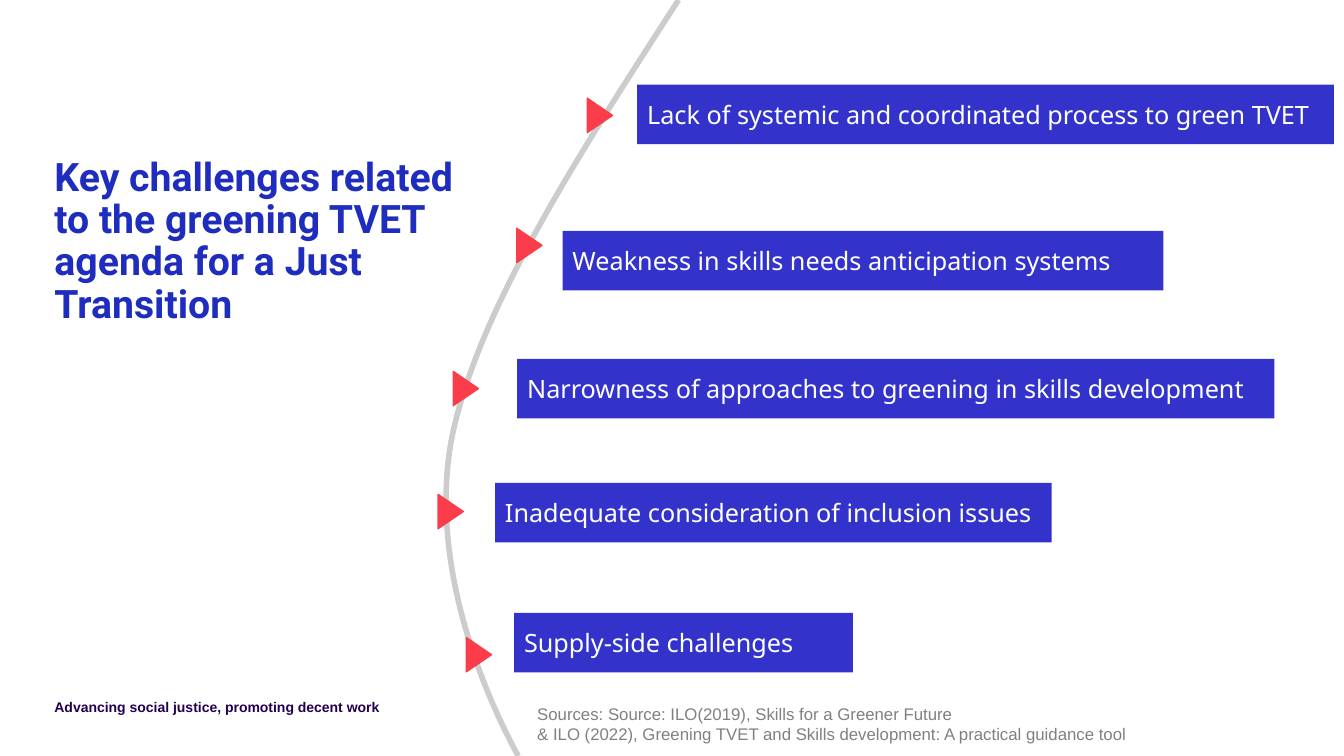
"""Build the slide on key challenges of greening TVET for a Just Transition."""
from pptx import Presentation
from pptx import util as u
from pptx.dml.color import RGBColor
from pptx.enum import shapes, text

TITLE = "Key challenges related to the greening TVET agenda for a Just Transition"
MOTTO = "Advancing social justice, promoting decent work"
SOURCES = [
    "Sources: Source: ILO(2019), Skills for a Greener Future",
    "& ILO (2022), Greening TVET and Skills development: A practical guidance tool",
]
CHALLENGES = [
    ("Lack of systemic and coordinated process to green TVET", (6.32, 0.84, 6.91), (5.78, 1.02)),
    ("Weakness in skills needs anticipation systems", (5.58, 2.29, 5.96), (5.08, 2.31)),
    ("Narrowness of approaches to greening in skills development", (5.13, 3.56, 7.51), (4.45, 3.73)),
    ("Inadequate consideration of inclusion issues", (4.91, 4.79, 5.52), (4.3, 4.95)),
    ("Supply-side challenges", (5.1, 6.08, 3.36), (4.58, 6.37)),
]
ARC = [
    [(6.73, 0), (5.74, 1.53), (4.76, 3.05), (4.49, 4.3)],
    [(4.49, 4.3), (4.23, 5.55), (4.8, 6.88), (5.14, 7.5)],
]
COLORS = {"title": "1E2DBE", "motto": "230050", "arc": "CCCCCC", "bar": "3333CC",
          "marker": "FA3C4B", "label": "FFFFFF", "sources": "808080"}
BAR_HEIGHT = 0.59
MARKER = (0.34, 0.25)
MARGIN = 0.54
FOOT_TOP = 6.93
ARC_STEPS = 40


def color(name):
    return RGBColor.from_string(COLORS[name])


def inches(*lengths):
    return [u.Inches(length) for length in lengths]


def write(shape, lines, font, size, tint, bold=False, anchor=text.MSO_ANCHOR.MIDDLE, inset=True):
    frame = shape.text_frame
    frame.word_wrap = True
    frame.vertical_anchor = anchor
    if not inset:
        frame.margin_left = frame.margin_top = frame.margin_right = frame.margin_bottom = 0
    frame.text = "\n".join(lines)
    for paragraph in frame.paragraphs:
        paragraph.alignment = text.PP_ALIGN.LEFT
        paragraph.font.name = font
        paragraph.font.size = u.Pt(size)
        paragraph.font.bold = bold
        paragraph.font.color.rgb = color(tint)
    return frame


def bezier(points, t):
    weights = ((1 - t) ** 3, 3 * t * (1 - t) ** 2, 3 * t ** 2 * (1 - t), t ** 3)
    return inches(*(sum(w * p[axis] for w, p in zip(weights, points)) for axis in (0, 1)))


def add_arc(slide):
    builder = slide.shapes.build_freeform(*inches(*ARC[0][0]))
    builder.add_line_segments(
        [bezier(curve, step / ARC_STEPS) for curve in ARC for step in range(1, ARC_STEPS + 1)],
        close=False)
    arc = builder.convert_to_shape()
    arc.shadow.inherit = False
    arc.fill.background()
    arc.line.color.rgb = color("arc")
    arc.line.width = u.Pt(4)


def add_filled(slide, kind, box, tint):
    shape = slide.shapes.add_shape(kind, *inches(*box))
    shape.shadow.inherit = False
    shape.fill.solid()
    shape.fill.fore_color.rgb = color(tint)
    return shape


def add_challenge(slide, label, bar_place, marker_place):
    left, top, width = bar_place
    bar = add_filled(slide, shapes.MSO_SHAPE.RECTANGLE, (left, top, width, BAR_HEIGHT), "bar")
    bar.line.fill.background()
    write(bar, [label], "Noto Sans", 18, "label")
    marker = add_filled(slide, shapes.MSO_SHAPE.ISOSCELES_TRIANGLE, marker_place + MARKER, "marker")
    marker.rotation = 90
    marker.line.color.rgb = color("marker")
    marker.line.width = u.Pt(1)


def main():
    deck = Presentation()
    deck.slide_width, deck.slide_height = inches(13.33, 7.5)
    slide = deck.slides.add_slide(deck.slide_layouts[5])

    title = slide.shapes.title
    title.left, title.top, title.width, title.height = inches(MARGIN, 1.56, 4.18, 0.79)
    heading = write(title, [TITLE], "Roboto", 28, "title", True, text.MSO_ANCHOR.TOP, False)
    heading.auto_size = text.MSO_AUTO_SIZE.NONE
    heading.paragraphs[0].line_spacing = 0.9

    motto = slide.shapes.add_textbox(*inches(MARGIN, FOOT_TOP, 6.13, 0.2))
    write(motto, [MOTTO], "Arial", 10, "motto", True, text.MSO_ANCHOR.TOP, False)

    add_arc(slide)
    for challenge in CHALLENGES:
        add_challenge(slide, *challenge)

    sources = slide.shapes.add_textbox(*inches(5.23, FOOT_TOP, 6.76, 0.5))
    write(sources, SOURCES, "Arial", 12, "sources")
    deck.save("out.pptx")


if __name__ == "__main__":
    main()
